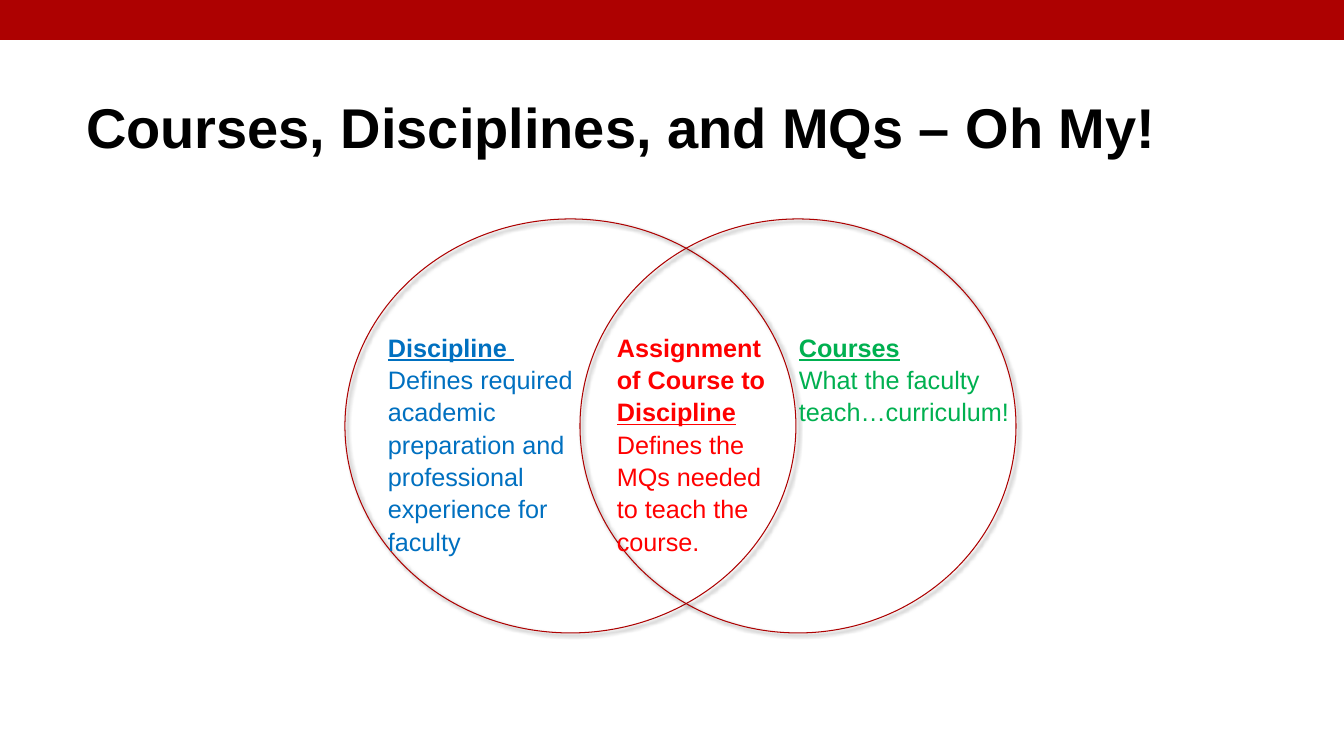
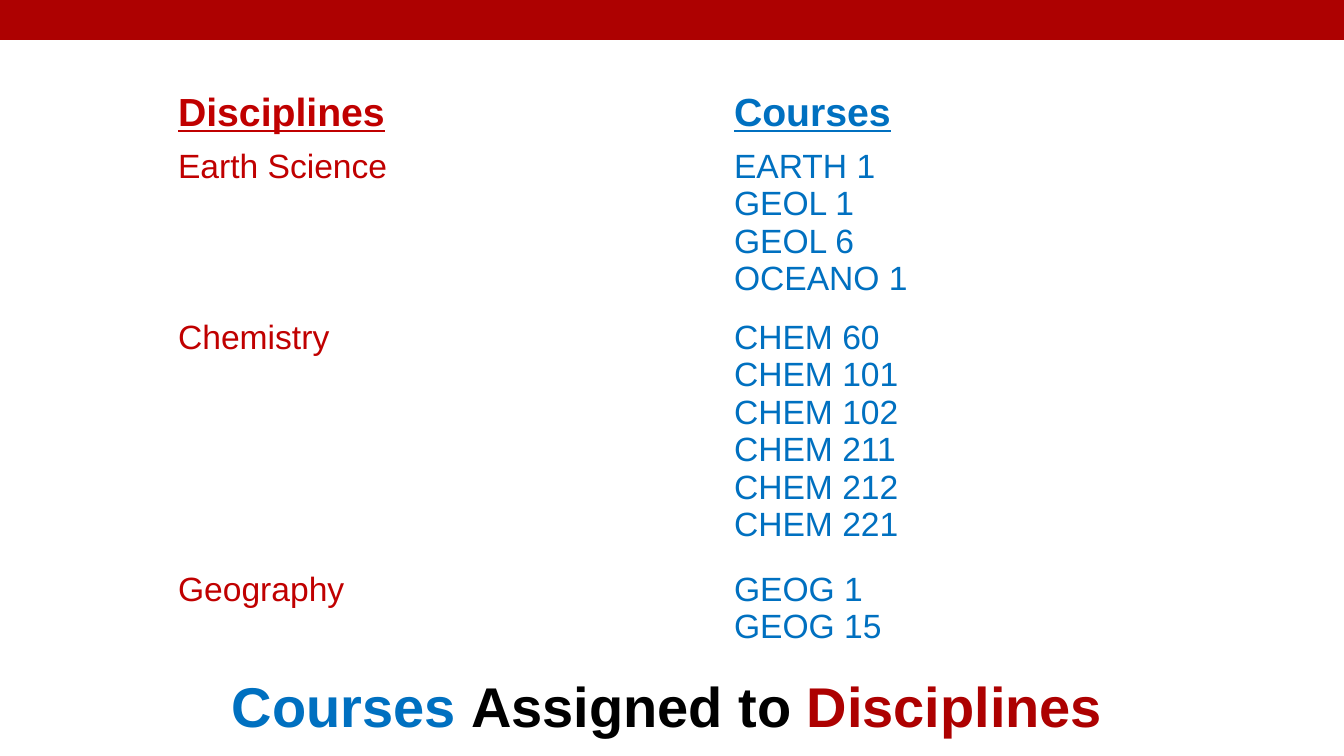
"""Build two slides on courses, disciplines and how they are matched."""
from pptx import Presentation
from pptx.dml.color import RGBColor
from pptx.enum.shapes import MSO_SHAPE
from pptx.enum.text import MSO_ANCHOR, MSO_AUTO_SIZE, PP_ALIGN
from pptx.oxml import parse_xml
from pptx.oxml.ns import nsdecls, qn
from pptx.util import Emu, Pt

RECT, OVAL = MSO_SHAPE.RECTANGLE, MSO_SHAPE.OVAL
TOP, NO_FIT = MSO_ANCHOR.TOP, MSO_AUTO_SIZE.NONE
LEFT, CENTER = PP_ALIGN.LEFT, PP_ALIGN.CENTER

SCALE = 914400 / 100.8
WIDE, HIGH = 1344, 756
FONT = "Arial"
RED, BLUE, GREEN = "AD0101", "0070C0", "00B050"
BRIGHT, DARK, BLACK = "FF0000", "C00000", "000000"

HEAD = {"bold": True, "underline": True}
BOLD = {"bold": True, "underline": False}
BODY = {"bold": False, "underline": False}

MY_TITLE = [("Courses, Disciplines, and MQs – Oh My!", BLACK)]
MATCH_TITLE = [("Courses ", BLUE), ("Assigned to ", BLACK), ("Disciplines", RED)]

CIRCLES = [(345, 219, 451, 414), (580, 219, 436, 414)]
NOTES = [
    (378, 229, 224, BLUE, [
        [("Discipline", HEAD), (" ", {"bold": False, "underline": True})],
        [("Defines required academic preparation and professional "
          "experience for faculty", BODY)],
    ]),
    (789, 248, 102, GREEN, [
        [("Courses", HEAD)],
        [("What the faculty teach…curriculum!", BODY)],
    ]),
    (607, 182, 254, BRIGHT, [
        [("Assignment of Course to ", BOLD), ("Discipline", HEAD),
         (" Defines the MQs needed to teach the course.", BODY)],
    ]),
]
NOTE_TOP = 325

ROWS = [
    ("Disciplines", ["Courses"]),
    ("Earth Science", ["EARTH 1", "GEOL 1", "GEOL 6", "OCEANO 1"]),
    ("Chemistry", ["CHEM 60", "CHEM 101", "CHEM 102", "CHEM 211",
                   "CHEM 212", "CHEM 221"]),
    ("Geography", ["GEOG 1", "GEOG 15"]),
]
COL = 556
LEAD, INSET = 1.2 * 1.4, 10


def px(*sizes):
    return [Emu(round(size * SCALE)) for size in sizes]


def rgb(code):
    return RGBColor.from_string(code)


def add_run(para, text, size, color, style):
    run = para.add_run()
    run.text = text
    form = {"name": FONT, "size": Pt(size), **style}
    for key, value in form.items():
        setattr(run.font, key, value)
    run.font.color.rgb = rgb(color)


def next_para(frame, index):
    return frame.add_paragraph() if index else frame.paragraphs[0]


def add_slide(deck, title, place, align, wrap):
    slide = deck.slides.add_slide(deck.slide_layouts[5])
    band = slide.shapes.add_shape(RECT, *px(0, 0, WIDE, 40))
    band.shadow.inherit = False
    band.fill.solid()
    band.fill.fore_color.rgb = rgb(RED)
    band.line.fill.background()

    box = slide.shapes.title
    box.left, box.top, box.width, box.height = px(*place)
    frame = box.text_frame
    form = {"auto_size": NO_FIT, "vertical_anchor": TOP, "word_wrap": wrap}
    for key, value in form.items():
        setattr(frame, key, value)
    para = frame.paragraphs[0]
    para.alignment = align
    for text, color in title:
        add_run(para, text, 40, color, {"bold": True})
    return slide


def add_circle(slide, place):
    ring = slide.shapes.add_shape(OVAL, *px(*place))
    ring.fill.background()
    ring.line.color.rgb = rgb(RED)
    ring.line.width = Pt(0.75)
    ring.shadow.inherit = False
    ring._element.spPr.find(qn("a:effectLst")).append(parse_xml(
        f'<a:outerShdw {nsdecls("a")} blurRad="{Pt(3)}" dist="{Pt(2)}" '
        f'dir="2700000" rotWithShape="0"><a:srgbClr val="{BLACK}">'
        '<a:alpha val="60000"/></a:srgbClr></a:outerShdw>'))


def add_note(slide, left, width, height, color, paras):
    box = slide.shapes.add_textbox(*px(left, NOTE_TOP, width, height))
    frame = box.text_frame
    frame.word_wrap = True
    for index, runs in enumerate(paras):
        para = next_para(frame, index)
        para.line_spacing = 1.07
        for text, style in runs:
            add_run(para, text, 18, color, style)


def add_grid(slide):
    sizes = [24 if index else 28 for index in range(len(ROWS))]
    highs = [round(len(names) * size * LEAD + INSET)
             for size, (_, names) in zip(sizes, ROWS)]
    place = px(168, 86, 2 * COL, sum(highs))
    table = slide.shapes.add_table(len(ROWS), 2, *place).table
    table.first_row = table.horz_banding = False
    for row, (field, names) in enumerate(ROWS):
        table.rows[row].height = px(highs[row])[0]
        style = BODY if row else HEAD
        for col, (lines, color) in enumerate([([field], DARK), (names, BLUE)]):
            cell = table.cell(row, col)
            cell.fill.background()
            for index, line in enumerate(lines):
                para = next_para(cell.text_frame, index)
                add_run(para, line, sizes[row], color, style)


def main():
    deck = Presentation()
    deck.slide_width, deck.slide_height = px(WIDE, HIGH)

    slide = add_slide(deck, MY_TITLE, (76, 87, 1177, 78), LEFT, True)
    for place in CIRCLES:
        add_circle(slide, place)
    for note in NOTES:
        add_note(slide, *note)

    slide = add_slide(deck, MATCH_TITLE, (218, 666, 898, 78), CENTER, False)
    add_grid(slide)
    deck.save("out.pptx")


if __name__ == "__main__":
    main()
